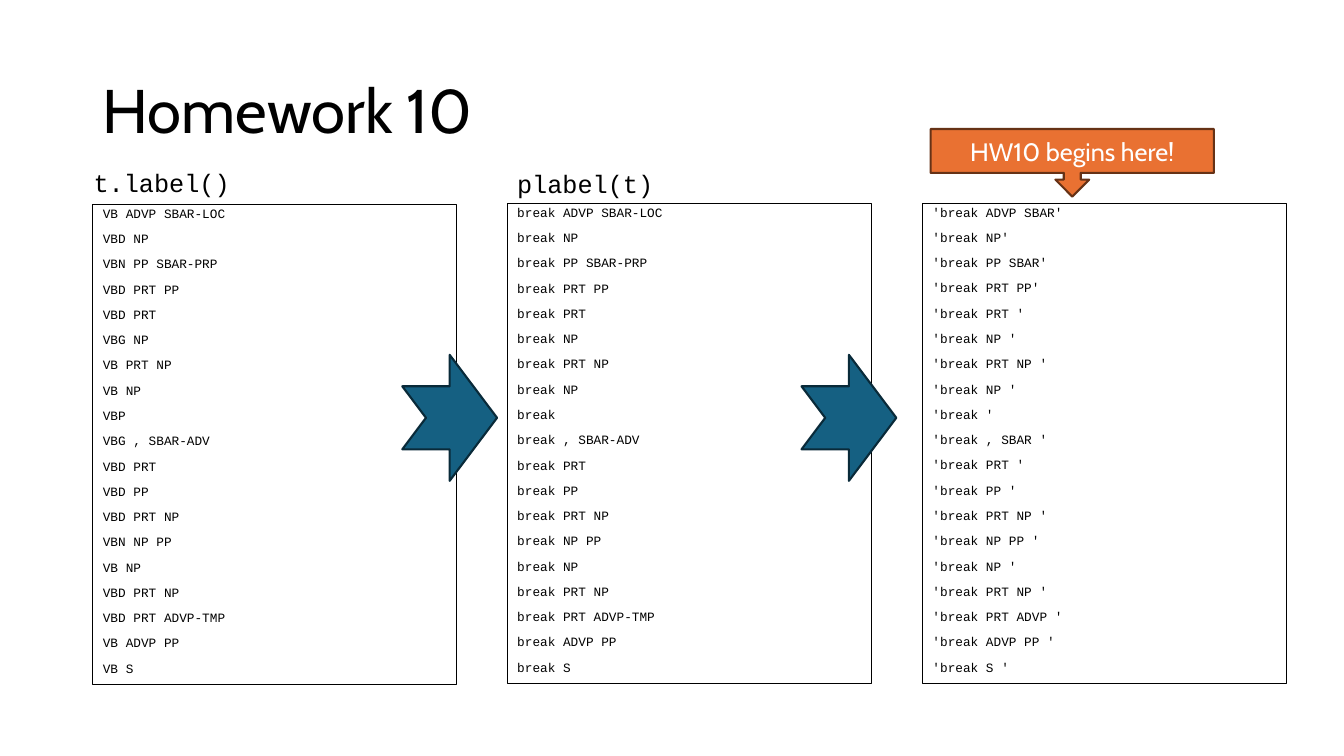
import pptx
import pptx.util
import pptx.dml.color
import pptx.enum.shapes
import pptx.enum.text
import pptx.oxml.ns
from lxml import etree
from pptx.util import Inches

COLORS = {
    "text": "000000",
    "arrow": "156082",
    "arrow_line": "092A39",
    "callout": "E97132",
    "callout_line": "663216",
    "callout_text": "FFFFFF",
}
CODE_FONT = "Courier New"
TITLE_FONT = "Cabin"
SHAPES = pptx.enum.shapes.MSO_SHAPE
ANCHOR = pptx.enum.text.MSO_ANCHOR
ALIGN = pptx.enum.text.PP_ALIGN
AUTO_SIZE = pptx.enum.text.MSO_AUTO_SIZE

LABELS = [
    "VB ADVP SBAR-LOC", "VBD NP", "VBN PP SBAR-PRP", "VBD PRT PP", "VBD PRT",
    "VBG NP", "VB PRT NP", "VB NP", "VBP", "VBG , SBAR-ADV", "VBD PRT",
    "VBD PP", "VBD PRT NP", "VBN NP PP", "VB NP", "VBD PRT NP",
    "VBD PRT ADVP-TMP", "VB ADVP PP", "VB S",
]
UNPADDED_ROWS = 4  # the first quoted rows have no space before the quote


def rgb(name):
    return pptx.dml.color.RGBColor.from_string(COLORS[name])


def place(sp, left, top, width, height):
    sp.left, sp.top = Inches(left), Inches(top)
    sp.width, sp.height = Inches(width), Inches(height)


def format_runs(p, font, size, color="text"):
    for r in p.runs:
        r.font.name = font
        r.font.size = pptx.util.Pt(size)
        r.font.color.rgb = rgb(color)


def set_line(sp, color, width):
    sp.line.color.rgb = rgb(color)
    sp.line.width = pptx.util.Pt(width)


def fill_title(sp, text):
    place(sp, 0.92, 0.4, 11.5, 1.45)
    tf = sp.text_frame
    tf.text = text
    tf.auto_size = AUTO_SIZE.NONE
    tf.vertical_anchor = ANCHOR.MIDDLE
    p = tf.paragraphs[0]
    p.alignment = ALIGN.LEFT
    p.line_spacing = 0.9
    format_runs(p, TITLE_FONT, 44)


def fill_code_list(sp, rows, left, top, indent=0):
    place(sp, left, top, 3.61, 4.76)
    set_line(sp, "text", 0.75)
    tf = sp.text_frame
    tf.text = "\n".join(rows)
    tf.word_wrap = True
    tf.auto_size = AUTO_SIZE.NONE
    tf.vertical_anchor = ANCHOR.TOP
    for i, p in enumerate(tf.paragraphs):
        # Plain rows: hanging indent without a bullet
        pPr = p._p.get_or_add_pPr()
        pPr.set("marL", str(Inches(indent)))
        pPr.set("indent", str(-Inches(indent)))
        etree.SubElement(pPr, pptx.oxml.ns.qn("a:buNone"))
        p.line_spacing = 0.7
        p.space_before = pptx.util.Pt(10.4 if i else 0)
        format_runs(p, CODE_FONT, 9.1)


def add_heading(s, text, left, top):
    sp = s.shapes.add_textbox(Inches(left), Inches(top), Inches(1.57), Inches(0.4))
    tf = sp.text_frame
    tf.text = text
    tf.word_wrap = False
    tf.auto_size = AUTO_SIZE.SHAPE_TO_FIT_TEXT
    format_runs(tf.paragraphs[0], CODE_FONT, 18)


def add_block(s, kind, left, top, width, height, fill):
    sp = s.shapes.add_shape(kind, Inches(left), Inches(top), Inches(width), Inches(height))
    sp.shadow.inherit = False
    sp.fill.solid()
    sp.fill.fore_color.rgb = rgb(fill)
    set_line(sp, fill + "_line", 1.5)
    return sp


def add_callout(s, text):
    sp = add_block(s, SHAPES.DOWN_ARROW_CALLOUT, 9.23, 1.28, 2.81, 0.67, "callout")
    tf = sp.text_frame
    tf.text = text
    tf.word_wrap = True
    tf.vertical_anchor = ANCHOR.MIDDLE
    p = tf.paragraphs[0]
    p.alignment = ALIGN.CENTER
    format_runs(p, TITLE_FONT, 18, "callout_text")


def main():
    prs = pptx.Presentation()
    prs.slide_width, prs.slide_height = Inches(13.33), Inches(7.5)
    s = prs.slides.add_slide(prs.slide_layouts.get_by_name("Two Content"))
    title, labels_box, verbs_box = list(s.placeholders)[:3]
    for sp in list(s.placeholders)[3:]:
        sp._element.getparent().remove(sp._element)

    # Each step rewrites the labels: verb tag to word, then bare phrase names
    phrases = [label.split()[1:] for label in LABELS]
    verbs = [" ".join(["break"] + words) for words in phrases]
    quoted = []
    for i, words in enumerate(phrases):
        bare = " ".join(["break"] + [w.split("-")[0] for w in words])
        quoted.append(f"'{bare}'" if i < UNPADDED_ROWS else f"'{bare} '")

    # Title and the three lists
    fill_title(title, "Homework 10")
    fill_code_list(labels_box, LABELS, 0.92, 2.03, indent=0.25)
    fill_code_list(verbs_box, verbs, 5.03, 2.02, indent=0.25)
    quoted_box = s.shapes.add_textbox(0, 0, 0, 0)
    fill_code_list(quoted_box, quoted, 9.15, 2.02)

    # Arrows between the lists
    for left in (3.99, 7.95):
        add_block(s, SHAPES.NOTCHED_RIGHT_ARROW, left, 3.52, 0.94, 1.25, "arrow")

    # Headings and callout
    add_heading(s, "plabel(t)", 5.03, 1.62)
    add_heading(s, "t.label()", 0.83, 1.61)
    add_callout(s, "HW10 begins here!")

    prs.save("out.pptx")


if __name__ == "__main__":
    main()
